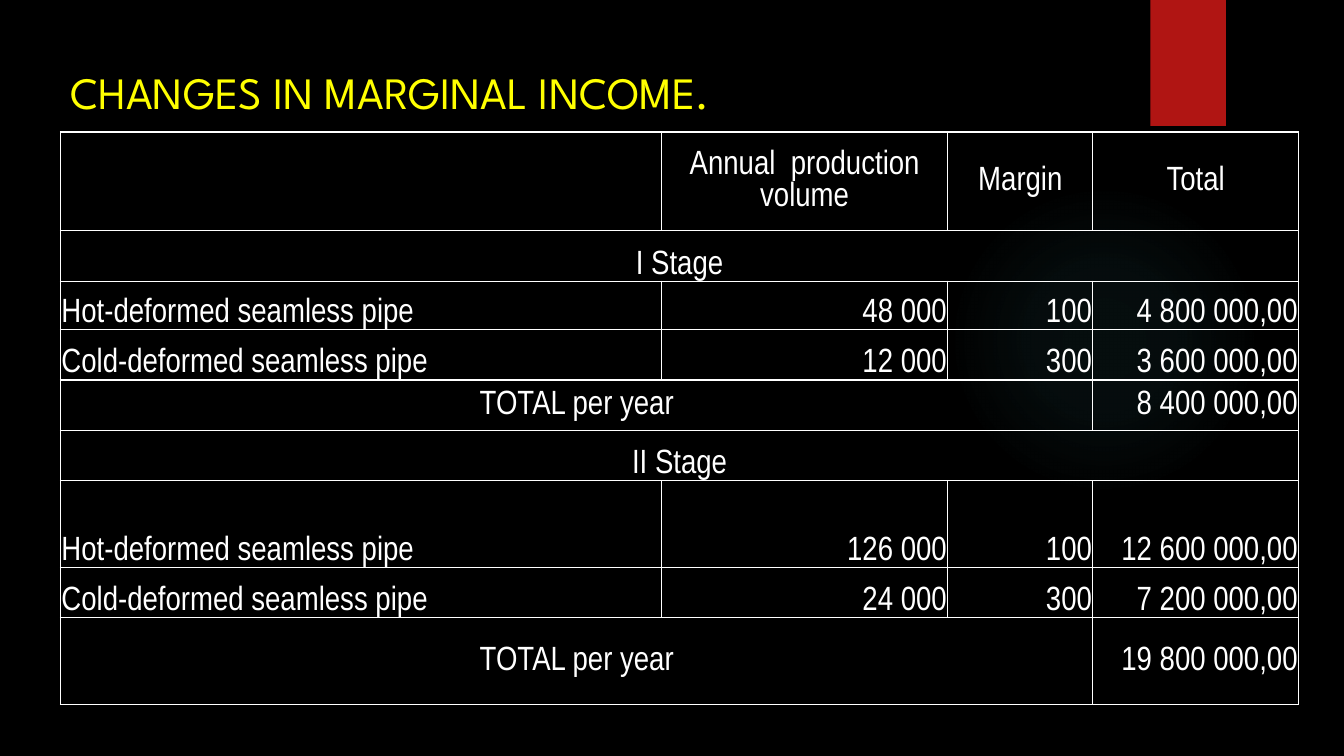
from pptx import Presentation
from pptx.dml.color import RGBColor
from pptx.enum.shapes import MSO_SHAPE as Shape
from pptx.enum.text import MSO_ANCHOR as Anchor, PP_ALIGN as Align
from pptx.oxml import parse_xml
from pptx.oxml.ns import nsdecls
from pptx.util import Inches, Pt

COLORS = {"background": "000000", "glow": "50B9C1", "ribbon": "B01513",
          "title": "FFFF00", "text": "FFFFFF", "border": "FFFFFF"}
TITLE_FONT, TABLE_FONT = "League Spartan", "Arial Narrow"
LEFT = 0.6
COLUMNS = [5.96, 2.84, 1.44, 2.04]
ROWS = [0.98, 0.5, 0.48, 0.5, 0.5, 0.5, 0.86, 0.5, 0.86]
HEADER = ["", "Annual  production volume", "Margin", "Total"]
HOT, COLD = "Hot-deformed seamless pipe", "Cold-deformed seamless pipe"
STAGES = [
    ("I Stage", [(HOT, "48 000", "100", "4 800 000,00"),
                 (COLD, "12 000", "300", "3 600 000,00")], "8 400 000,00"),
    ("II Stage", [(HOT, "126 000", "100", "12 600 000,00"),
                  (COLD, "24 000", "300", "7 200 000,00")], "19 800 000,00"),
]


def rgb(name):
    return RGBColor.from_string(COLORS[name])


def add_block(s, kind, color, *box):
    sp = s.shapes.add_shape(kind, *map(Inches, box))
    sp.shadow.inherit = False
    sp.fill.solid()
    sp.fill.fore_color.rgb = rgb(color)
    sp.line.fill.background()
    return sp


def add_glow(s, *box):
    """Add a circle that fades out from its centre."""
    sp = add_block(s, Shape.OVAL, "glow", *box)
    stops = "".join(
        f'<a:gs pos="{pos * 1000}"><a:srgbClr val="{COLORS["glow"]}">'
        f'<a:alpha val="{alpha * 1000}"/></a:srgbClr></a:gs>'
        for pos, alpha in [(0, 7), (36, 6), (69, 0), (100, 0)])
    gradient = parse_xml(
        f'<a:gradFill {nsdecls("a")}><a:gsLst>{stops}</a:gsLst>'
        '<a:path path="circle"><a:fillToRect l="50000" t="50000" r="50000" b="50000"/>'
        '</a:path></a:gradFill>')
    props = sp._element.spPr
    props.replace(props.find("{*}solidFill"), gradient)


def style_paragraph(p, font, size, color, align=Align.LEFT):
    p.alignment = align
    p.font.name, p.font.size = font, Pt(size)
    p.font.color.rgb = rgb(color)


def add_title(s, text, *box):
    tf = s.shapes.add_textbox(*map(Inches, box)).text_frame
    tf.word_wrap = True
    tf.vertical_anchor = Anchor.MIDDLE
    p = tf.paragraphs[0]
    p.text = text
    p.line_spacing = 0.9
    style_paragraph(p, TITLE_FONT, 32, "title")


def clear_cell(cell):
    """Give a cell thin borders, narrow margins and no fill."""
    for side in "LRTB":
        cell._tc.get_or_add_tcPr().append(parse_xml(
            f'<a:ln{side} {nsdecls("a")} w="{Pt(1)}"><a:solidFill>'
            f'<a:srgbClr val="{COLORS["border"]}"/></a:solidFill></a:ln{side}>'))
    cell.fill.background()
    cell.margin_left = cell.margin_right = cell.margin_top = Inches(0.01)
    cell.margin_bottom = 0


def write_cell(cell, text, align=Align.CENTER, anchor=Anchor.MIDDLE):
    p = cell.text_frame.paragraphs[0]
    p.text = text
    style_paragraph(p, TABLE_FONT, 24, "text", align)
    cell.vertical_anchor = anchor


def write_stage(table, top, name, products, total):
    """Fill a stage heading, its product rows and its total row."""
    last = len(COLUMNS) - 1
    heading = table.cell(top, 0)
    heading.merge(table.cell(top, last))
    write_cell(heading, name, anchor=Anchor.BOTTOM)
    for row, product in enumerate(products, top + 1):
        for col, text in enumerate(product):
            align = Align.RIGHT if col else Align.LEFT
            write_cell(table.cell(row, col), text, align, Anchor.BOTTOM)
    bottom = top + len(products) + 1
    label = table.cell(bottom, 0)
    label.merge(table.cell(bottom, last - 1))
    write_cell(label, "TOTAL per year")
    write_cell(table.cell(bottom, last), total, Align.RIGHT)


def add_income_table(s, left, top):
    table = s.shapes.add_table(
        len(ROWS), len(COLUMNS), Inches(left), Inches(top),
        Inches(sum(COLUMNS)), Inches(sum(ROWS))).table
    table.first_row = table.horz_banding = False
    for column, width in zip(table.columns, COLUMNS):
        column.width = Inches(width)
    for row, height in zip(table.rows, ROWS):
        row.height = Inches(height)
    for cell in table.iter_cells():
        clear_cell(cell)
    for col, text in enumerate(HEADER):
        write_cell(table.cell(0, col), text)
    row = 1
    for name, products, total in STAGES:
        write_stage(table, row, name, products, total)
        row += len(products) + 2


def main():
    prs = Presentation()
    prs.slide_width, prs.slide_height = Inches(13.33), Inches(7.5)
    s = prs.slides.add_slide(prs.slide_layouts[6])
    s.background.fill.solid()
    s.background.fill.fore_color.rgb = rgb("background")
    add_glow(s, 9.41, 1.83, 3.08, 3.08)
    add_block(s, Shape.RECTANGLE, "ribbon", 11.41, 0, 0.75, 1.25)
    add_title(s, "CHANGES IN MARGINAL INCOME.", LEFT, 0.5, 11.97, 0.89)
    add_income_table(s, LEFT, 1.31)
    prs.save("out.pptx")


if __name__ == "__main__":
    main()
